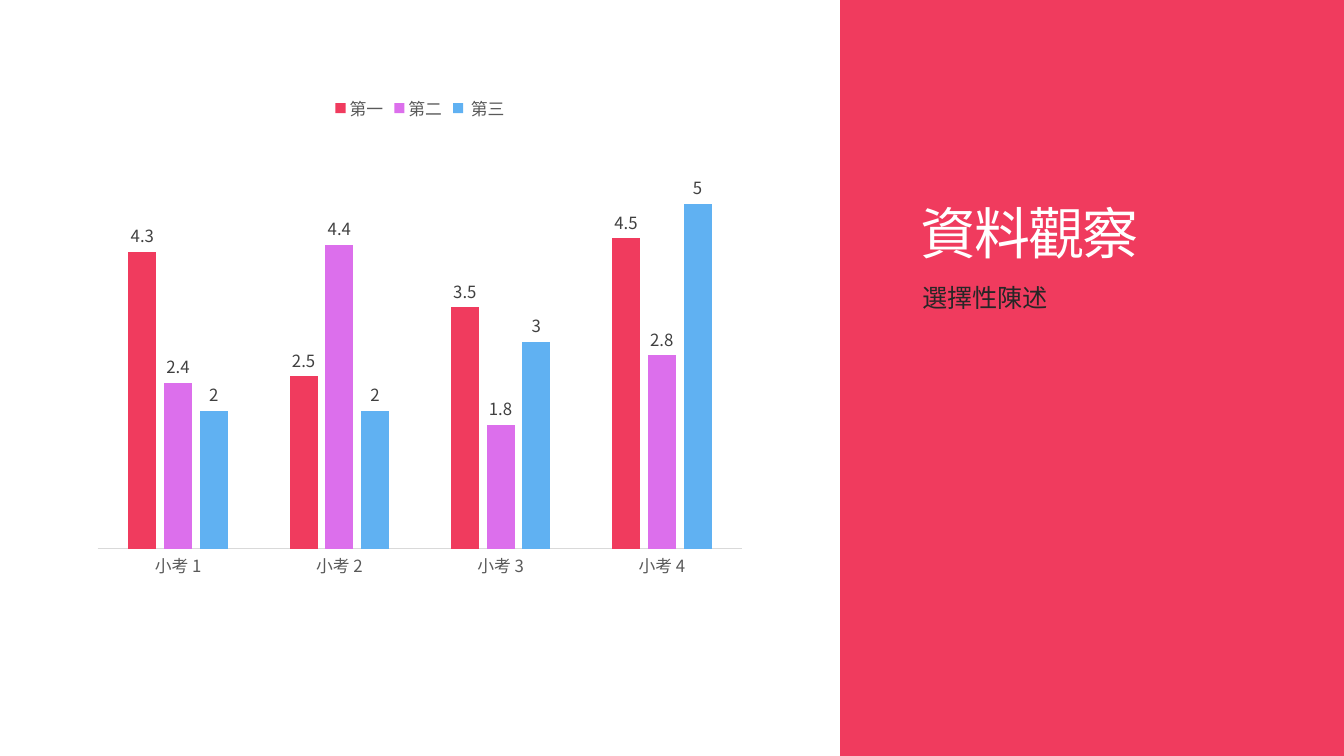
import pptx
import pptx.chart.data
import pptx.dml.color
import pptx.enum.chart
import pptx.enum.shapes
import pptx.enum.text
import pptx.oxml.ns
import pptx.util
from lxml import etree

Cm = pptx.util.Cm
Pt = pptx.util.Pt
qn = pptx.oxml.ns.qn


def rgb(value):
    return pptx.dml.color.RGBColor.from_string(value)


class SlideBuilder:
    FONT = "Noto Sans CJK TC"
    RED, PURPLE, BLUE = "F03B5E", "DC6FEC", "60B1F2"
    WHITE, INK = "FFFFFF", "262626"
    LABEL, AXIS_TEXT, AXIS_LINE = "404040", "595959", "D9D9D9"

    def __init__(self, prs):
        self.slide = prs.slides.add_slide(prs.slide_layouts[6])

    def style(self, font, size, color):
        font.name = self.FONT
        font.size = Pt(size)
        font.color.rgb = rgb(color)

    def set_east_asian(self, root):
        """Apply the typeface to Chinese characters as well as Latin ones."""
        for latin in root.iter(qn("a:latin")):
            ea = etree.Element(qn("a:ea"), typeface=self.FONT)
            latin.addnext(ea)

    def panel(self, x, y, w, h, color):
        sp = self.slide.shapes.add_shape(
            pptx.enum.shapes.MSO_SHAPE.RECTANGLE, Cm(x), Cm(y), Cm(w), Cm(h))
        sp.shadow.inherit = False
        sp.fill.solid()
        sp.fill.fore_color.rgb = rgb(color)
        sp.line.fill.background()

    def text(self, x, y, w, h, text, size, color, anchor, line=1.0, tracking=0):
        sp = self.slide.shapes.add_textbox(Cm(x), Cm(y), Cm(w), Cm(h))
        tf = sp.text_frame
        tf.word_wrap = True
        tf.vertical_anchor = anchor
        p = tf.paragraphs[0]
        p.text = text
        p.line_spacing = line
        self.style(p.font, size, color)
        for props in sp.element.iter(qn("a:defRPr")):
            props.set("spc", str(round(tracking * 100)))
        self.set_east_asian(sp.element)

    def column_chart(self, x, y, w, h, categories, series):
        """Draw clustered columns; series holds (name, values, color) rows."""
        data = pptx.chart.data.CategoryChartData()
        data.categories = categories
        for name, values, _ in series:
            data.add_series(name, values)
        frame = self.slide.shapes.add_chart(
            pptx.enum.chart.XL_CHART_TYPE.COLUMN_CLUSTERED,
            Cm(x), Cm(y), Cm(w), Cm(h), data)
        chart = frame.chart
        chart.has_title = False
        self.style(chart.font, 10, "000000")

        chart.has_legend = True
        chart.legend.position = pptx.enum.chart.XL_LEGEND_POSITION.TOP
        chart.legend.include_in_layout = False
        self.style(chart.legend.font, 12, self.AXIS_TEXT)

        axis = chart.category_axis
        axis.major_tick_mark = pptx.enum.chart.XL_TICK_MARK.NONE
        axis.format.line.color.rgb = rgb(self.AXIS_LINE)
        axis.format.line.width = Pt(0.75)
        self.style(axis.tick_labels.font, 12, self.AXIS_TEXT)

        chart.value_axis.visible = False
        chart.value_axis.has_major_gridlines = False
        chart.value_axis.minimum_scale = 0
        chart.value_axis.maximum_scale = 6

        plot = chart.plots[0]
        plot.gap_width = 219
        plot.overlap = -27
        plot.vary_by_categories = False
        for bars, (_, _, color) in zip(plot.series, series):
            bars.format.fill.solid()
            bars.format.fill.fore_color.rgb = rgb(color)
            labels = bars.data_labels
            labels.show_value = True
            labels.position = pptx.enum.chart.XL_LABEL_POSITION.OUTSIDE_END
            self.style(labels.font, 12, self.LABEL)
        self.set_east_asian(chart.element)


def main():
    prs = pptx.Presentation()
    prs.slide_width = Cm(33.87)
    prs.slide_height = Cm(19.05)
    s = SlideBuilder(prs)
    anchors = pptx.enum.text.MSO_ANCHOR

    s.panel(21.17, 0, 12.7, 19.05, s.RED)
    s.text(22.94, 1.5, 9.4, 5.33, "資料觀察", 40, s.WHITE,
           anchors.BOTTOM, line=0.85, tracking=-1.2)
    s.text(22.99, 6.99, 9.45, 8.69, "選擇性陳述", 18, s.INK, anchors.TOP)
    s.column_chart(
        2.12, 2.12, 16.93, 12.7,
        [f"小考 {number}" for number in range(1, 5)],
        [("第一", (4.3, 2.5, 3.5, 4.5), s.RED),
         ("第二", (2.4, 4.4, 1.8, 2.8), s.PURPLE),
         (" 第三", (2, 2, 3, 5), s.BLUE)])

    prs.save("out.pptx")


if __name__ == "__main__":
    main()
